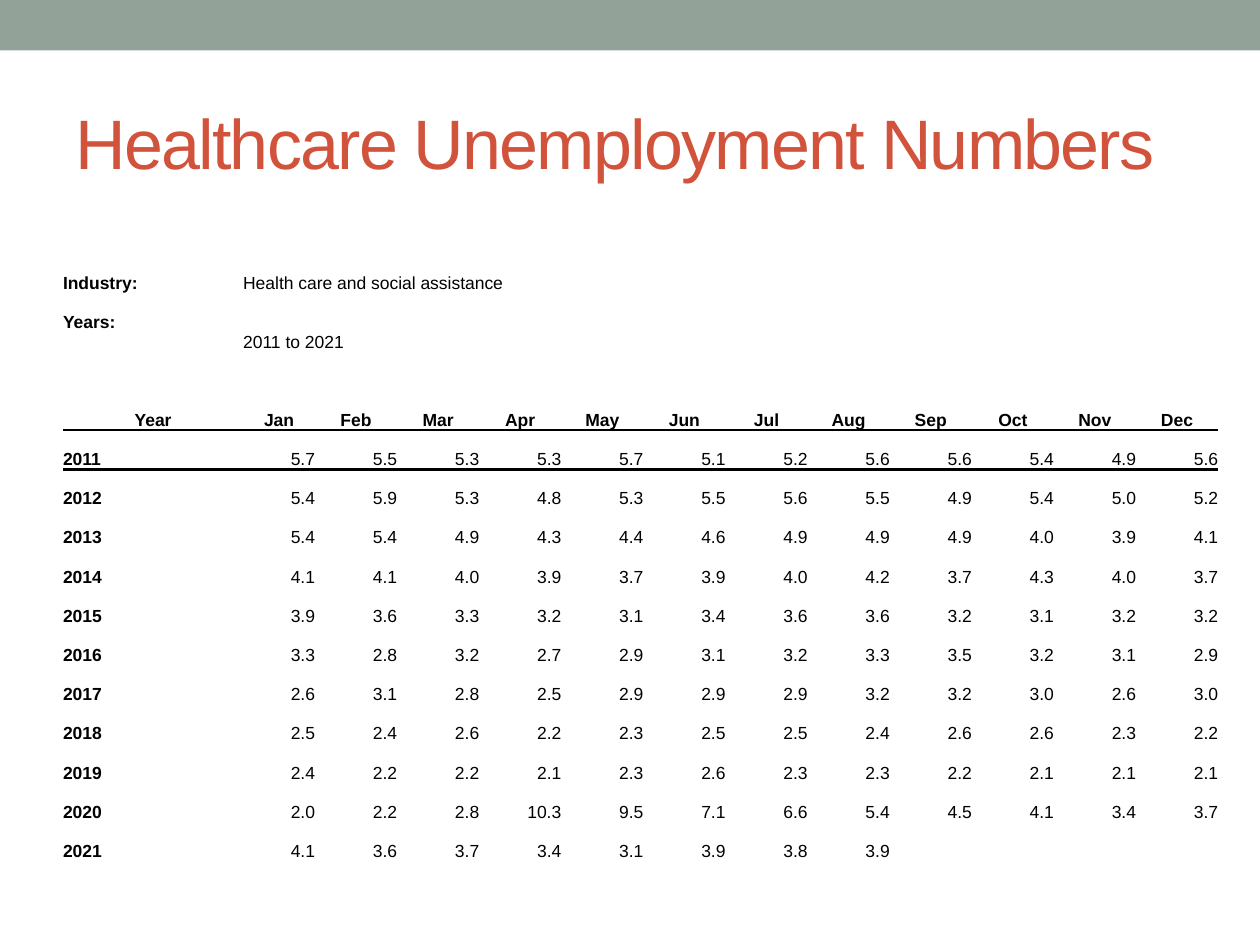
from lxml import etree
from pptx import Presentation
from pptx.dml.color import RGBColor
from pptx.enum import shapes, text
from pptx.oxml import ns
from pptx.util import Inches, Pt


def color(code):
    return RGBColor.from_string(code)


def write(cell, words, bold=False, align="LEFT", anchor="BOTTOM"):
    cell.vertical_anchor = getattr(text.MSO_ANCHOR, anchor)
    para = cell.text_frame.paragraphs[0]
    para.alignment = getattr(text.PP_ALIGN, align)
    run = para.add_run()
    run.text = words
    run.font.name = "Arial"
    run.font.size = Pt(10)
    run.font.bold = bold
    run.font.color.rgb = color("000000")


months = "Jan Feb Mar Apr May Jun Jul Aug Sep Oct Nov Dec".split()
rates = {
    "2011": "5.7 5.5 5.3 5.3 5.7 5.1 5.2 5.6 5.6 5.4 4.9 5.6",
    "2012": "5.4 5.9 5.3 4.8 5.3 5.5 5.6 5.5 4.9 5.4 5.0 5.2",
    "2013": "5.4 5.4 4.9 4.3 4.4 4.6 4.9 4.9 4.9 4.0 3.9 4.1",
    "2014": "4.1 4.1 4.0 3.9 3.7 3.9 4.0 4.2 3.7 4.3 4.0 3.7",
    "2015": "3.9 3.6 3.3 3.2 3.1 3.4 3.6 3.6 3.2 3.1 3.2 3.2",
    "2016": "3.3 2.8 3.2 2.7 2.9 3.1 3.2 3.3 3.5 3.2 3.1 2.9",
    "2017": "2.6 3.1 2.8 2.5 2.9 2.9 2.9 3.2 3.2 3.0 2.6 3.0",
    "2018": "2.5 2.4 2.6 2.2 2.3 2.5 2.5 2.4 2.6 2.6 2.3 2.2",
    "2019": "2.4 2.2 2.2 2.1 2.3 2.6 2.3 2.3 2.2 2.1 2.1 2.1",
    "2020": "2.0 2.2 2.8 10.3 9.5 7.1 6.6 5.4 4.5 4.1 3.4 3.7",
    "2021": "4.1 3.6 3.7 3.4 3.1 3.9 3.8 3.9",
}

deck = Presentation()
deck.slide_width = Inches(10)
deck.slide_height = Inches(7.5)
slide = deck.slides.add_slide(deck.slide_layouts[6])

band = slide.shapes.add_shape(
    shapes.MSO_SHAPE.RECTANGLE, 0, 0, Inches(10), Inches(0.4))
band.shadow.inherit = False
band.fill.solid()
band.fill.fore_color.rgb = color("93A299")
band.line.fill.background()

title = slide.shapes.add_textbox(Inches(0.5), Inches(0.58), Inches(9), Inches(1.08))
frame = title.text_frame
frame.word_wrap = True
frame.vertical_anchor = text.MSO_ANCHOR.MIDDLE
run = frame.paragraphs[0].add_run()
run.text = "Healthcare Unemployment Numbers"
run.font.name = "Arial"
run.font.size = Pt(40)
run.font.color.rgb = color("D2533C")
run.font._element.set("spc", "-100")

grid = slide.shapes.add_table(
    15, 13, Inches(0.5), Inches(2.17), Inches(9.17), Inches(4.67)).table
grid.first_row = False
grid.horz_banding = False
style = grid._tbl.tblPr.find(ns.qn("a:tableStyleId"))
style.text = "{2D5ABB26-0587-4C30-8999-92F81FD0307C}"

widths = [1.43, 0.57] + [(9.17 - 1.43 - 0.57) / 11] * 11
for col, width in zip(grid.columns, widths):
    col.width = Inches(width)

for cell in grid.iter_cells():
    cell.margin_left = cell.margin_right = 0
    cell.margin_top = cell.margin_bottom = 0
    cell.fill.background()

facts = [("Industry:", "Health care and social assistance", "TOP"),
         ("Years:", "2011 to 2021", "BOTTOM")]
for row, (label, fact, anchor) in enumerate(facts):
    grid.cell(row, 1).merge(grid.cell(row, 5))
    write(grid.cell(row, 0), label, bold=True, anchor="TOP")
    write(grid.cell(row, 1), fact, anchor=anchor)

for col, head in enumerate(["Year"] + months):
    write(grid.cell(3, col), head, bold=True, align="CENTER")
    for row, side in ((3, "a:lnB"), (4, "a:lnT")):
        line = etree.Element(ns.qn(side), w=str(Pt(1.5)))
        fill = etree.SubElement(line, ns.qn("a:solidFill"))
        etree.SubElement(fill, ns.qn("a:srgbClr"), val="000000")
        grid.cell(row, col)._tc.get_or_add_tcPr().insert(0, line)

for row, (year, rate) in enumerate(rates.items(), 4):
    write(grid.cell(row, 0), year, bold=True)
    for col, value in enumerate(rate.split(), 1):
        write(grid.cell(row, col), value, align="RIGHT")

deck.save("out.pptx")
